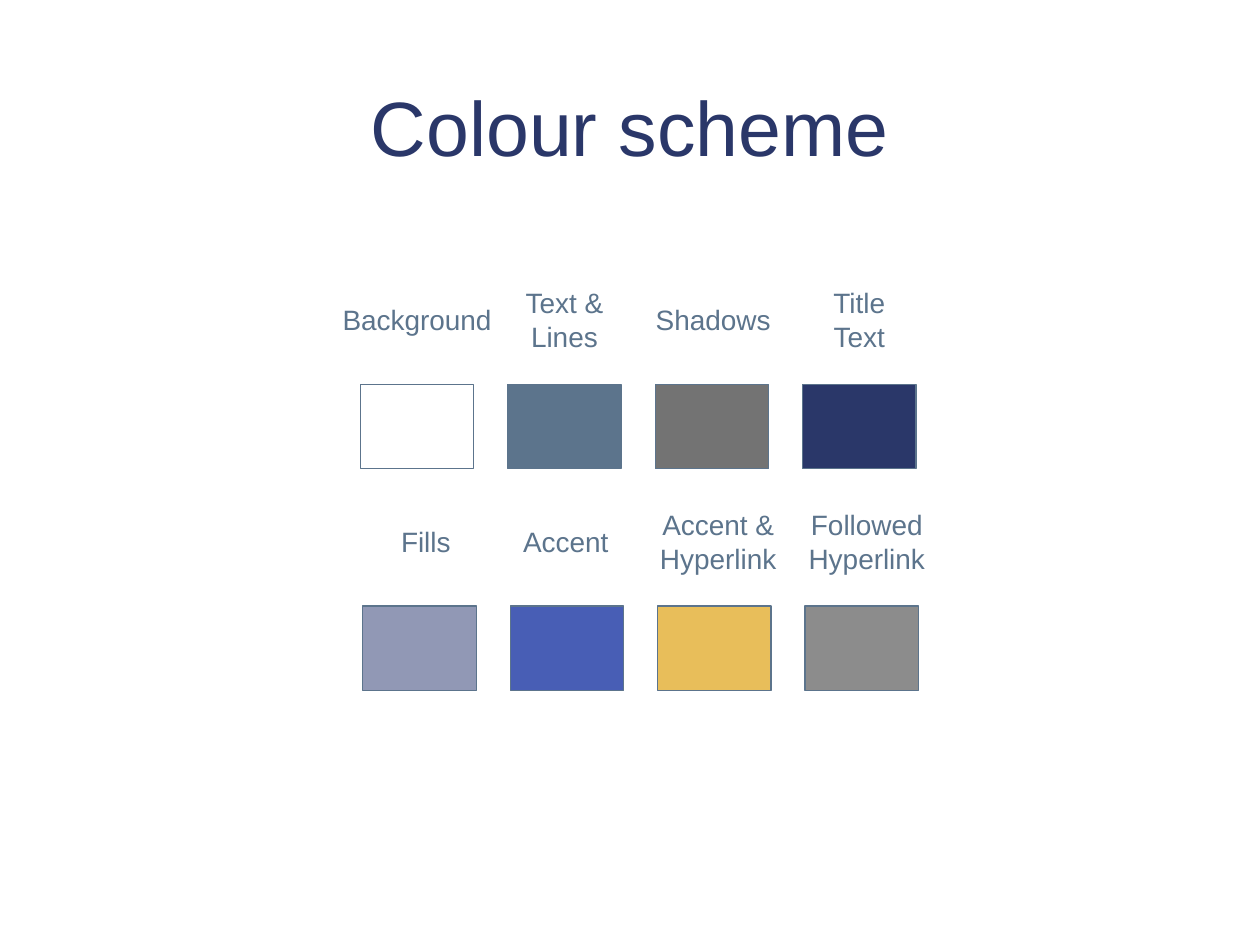
from pptx import Presentation
from pptx.dml.color import RGBColor
from pptx.enum.shapes import MSO_SHAPE as Shape
from pptx.enum.text import MSO_ANCHOR as Anchor, MSO_AUTO_SIZE as Fit, PP_ALIGN as Align
from pptx.util import Inches, Pt

WHITE = RGBColor(0xFF, 0xFF, 0xFF)
SLATE = RGBColor(0x5C, 0x74, 0x8C)
GREY = RGBColor(0x73, 0x73, 0x73)
NAVY = RGBColor(0x2A, 0x37, 0x69)
LILAC = RGBColor(0x91, 0x98, 0xB5)
BLUE = RGBColor(0x48, 0x5E, 0xB5)
GOLD = RGBColor(0xE8, 0xBE, 0x5A)
SILVER = RGBColor(0x8C, 0x8C, 0x8C)

STEP = 1.17
SWATCH = (0.9, 0.67)
LABEL_RISE = 0.51  # from the label's middle to the swatch's top

# Left and top of the first swatch, then label, label centre, label width, fill
ROWS = [
    (2.86, 3.05, [
        ("Background", 3.31, 1.39, WHITE),
        ("Text &\nLines", 4.48, 0.84, SLATE),
        ("Shadows", 5.66, 1.12, GREY),
        ("Title\vText", 6.82, 0.63, NAVY),
    ]),
    (2.88, 4.81, [
        ("Fills", 3.38, 0.6, LILAC),
        ("Accent", 4.49, 0.88, BLUE),
        ("Accent &\nHyperlink", 5.7, 1.13, GOLD),
        ("Followed\nHyperlink", 6.88, 1.13, SILVER),
    ]),
]


def write(frame, text, size=16, color=SLATE, font="Arial", align=Align.CENTER):
    frame.text = text
    for par in frame.paragraphs:
        par.alignment = align
        for run in par.runs:
            run.font.name = font
            run.font.size = Pt(size)
            run.font.color.rgb = color


class Painter:
    def __init__(self, slide, line=SLATE, weight=0.75):
        self.slide = slide
        self.line = line
        self.weight = weight

    def text(self, text, left, top, width, height, wrap=True, **style):
        box = self.slide.shapes.add_textbox(
            Inches(left), Inches(top), Inches(width), Inches(height))
        frame = box.text_frame
        write(frame, text, **style)
        frame.word_wrap = wrap
        frame.vertical_anchor = Anchor.MIDDLE if wrap else Anchor.TOP
        frame.auto_size = Fit.NONE if wrap else Fit.SHAPE_TO_FIT_TEXT

    def label(self, text, center, middle, width):
        height = 0.37 if len(text.splitlines()) == 1 else 0.64
        self.text(text, center - width / 2, middle - height / 2,
                  width, height, wrap=False)

    def swatch(self, left, top, fill):
        box = self.slide.shapes.add_shape(
            Shape.RECTANGLE, Inches(left), Inches(top), *map(Inches, SWATCH))
        box.shadow.inherit = False
        box.fill.solid()
        box.fill.fore_color.rgb = fill
        box.line.color.rgb = self.line
        box.line.width = Pt(self.weight)


def main():
    deck = Presentation()
    deck.slide_width, deck.slide_height = Inches(10), Inches(7.5)
    slide = deck.slides.add_slide(deck.slide_layouts[6])
    slide.background.fill.solid()
    slide.background.fill.fore_color.rgb = WHITE

    paint = Painter(slide)
    paint.text("Colour scheme", 0.5, 0.37, 9, 1.25, size=44, color=NAVY)
    for left, top, cells in ROWS:
        for col, (name, center, width, fill) in enumerate(cells):
            paint.swatch(left + col * STEP, top, fill)
            paint.label(name, center, top - LABEL_RISE, width)
    deck.save("out.pptx")


if __name__ == "__main__":
    main()
